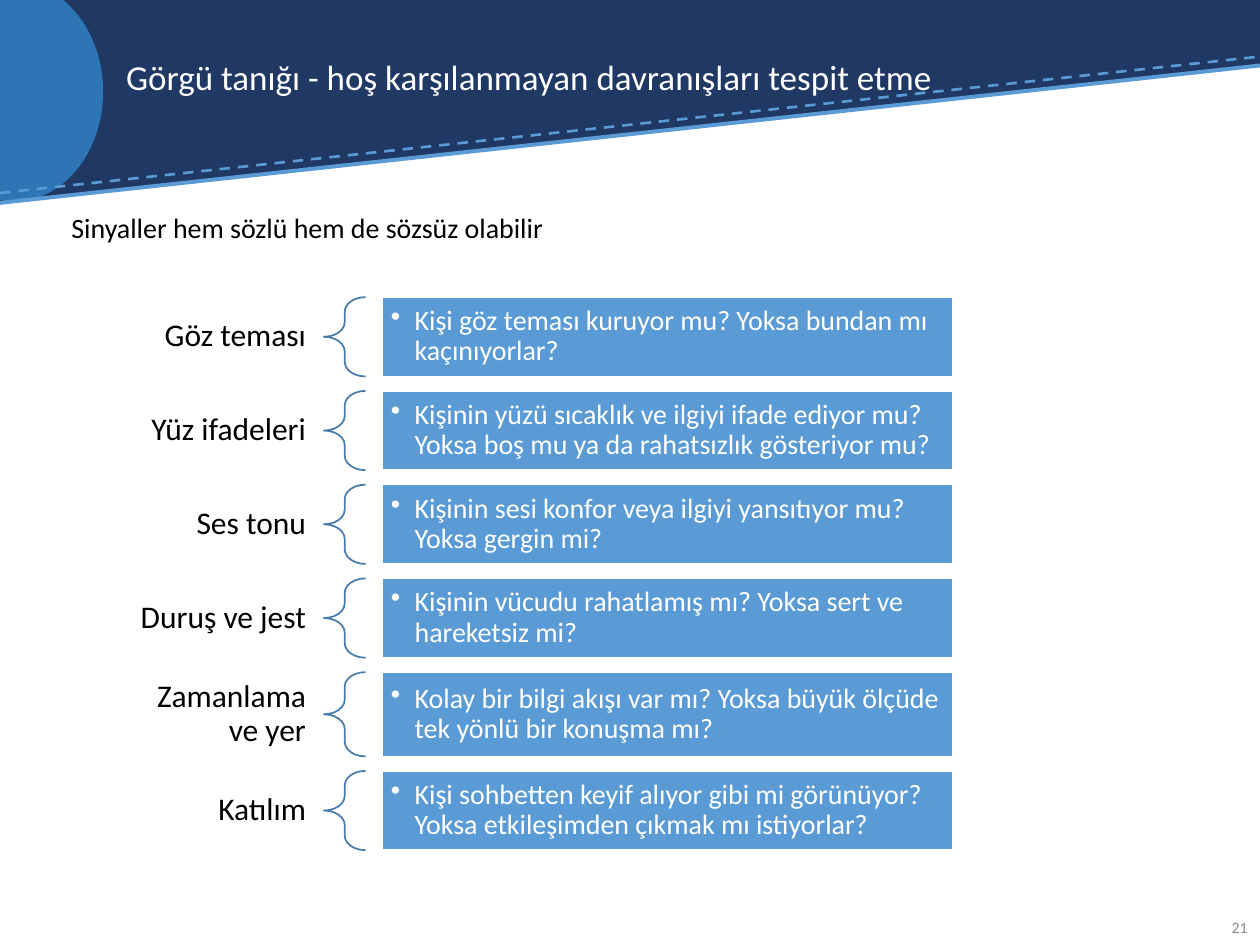
from lxml.etree import SubElement
from pptx import Presentation
from pptx.dml.color import RGBColor
from pptx.enum.dml import MSO_LINE
from pptx.enum.shapes import MSO_CONNECTOR, MSO_SHAPE
from pptx.enum.text import MSO_ANCHOR, PP_ALIGN
from pptx.oxml.ns import qn
from pptx.util import Cm, Pt

TITLE = "Görgü tanığı - hoş karşılanmayan davranışları tespit etme"
INTRO = "Sinyaller hem sözlü hem de sözsüz olabilir"
PAGE = "21"
SIGNALS = [
    ("Göz teması", "Kişi göz teması kuruyor mu? Yoksa bundan mı kaçınıyorlar?", 1.6),
    ("Yüz ifadeleri", "Kişinin yüzü sıcaklık ve ilgiyi ifade ediyor mu? "
     "Yoksa boş mu ya da rahatsızlık gösteriyor mu?", 1.6),
    ("Ses tonu", "Kişinin sesi konfor veya ilgiyi yansıtıyor mu? Yoksa gergin mi?", 1.6),
    ("Duruş ve jest", "Kişinin vücudu rahatlamış mı? Yoksa sert ve hareketsiz mi?", 1.6),
    ("Zamanlama ve yer", "Kolay bir bilgi akışı var mı? "
     "Yoksa büyük ölçüde tek yönlü bir konuşma mı?", 1.7),
    ("Katılım", "Kişi sohbetten keyif alıyor gibi mi görünüyor? "
     "Yoksa etkileşimden çıkmak mı istiyorlar?", 1.6),
]
NAVY, BLUE, SKY, BRACE = "203864", "2E75B6", "5B9BD5", "497CAB"
WHITE, BLACK, GREY = "FFFFFF", "000000", "8C8C8C"
FIRST_TOP, GAP = 5.99, 0.29


def rgb(code):
    return RGBColor.from_string(code)


def add_shape(s, kind, box, fill=None, line=None):
    sp = s.shapes.add_shape(kind, *map(Cm, box))
    sp.shadow.inherit = False
    if fill:
        sp.fill.solid()
        sp.fill.fore_color.rgb = rgb(fill)
    else:
        sp.fill.background()
    if line:
        sp.line.color.rgb = rgb(line)
        sp.line.width = Pt(1)
    else:
        sp.line.fill.background()
    return sp


def add_line(s, start_y, end_y, width, dash=None):
    sp = s.shapes.add_connector(MSO_CONNECTOR.STRAIGHT, 0, Cm(start_y), Cm(25.4), Cm(end_y))
    sp.line.color.rgb = rgb(SKY)
    sp.line.width = Pt(width)
    if dash:
        sp.line.dash_style = dash
    SubElement(sp._element.spPr, qn("a:effectLst"))


def write(sp, text, size, color, align=PP_ALIGN.LEFT, anchor=MSO_ANCHOR.MIDDLE,
          insets=(0.25, 0.13), bullet=False):
    tf = sp.text_frame
    tf.word_wrap = True
    tf.vertical_anchor = anchor
    tf.margin_left = tf.margin_right = Cm(insets[0])
    tf.margin_top = tf.margin_bottom = Cm(insets[1])
    p = tf.paragraphs[0]
    p.alignment = align
    p.line_spacing = 0.9
    if bullet:
        pPr = p._p.get_or_add_pPr()
        pPr.set("marL", str(Cm(0.48)))
        pPr.set("indent", str(-Cm(0.48)))
        SubElement(pPr, qn("a:buChar"), char="•")
    r = p.add_run()
    r.text = text
    r.font.name = "Calibri"
    r.font.size = Pt(size)
    r.font.color.rgb = rgb(color)


def add_text(s, box, *args, **kwargs):
    write(s.shapes.add_textbox(*map(Cm, box)), *args, **kwargs)


def add_header(s):
    add_shape(s, MSO_SHAPE.RECTANGLE, (0, 0, 25.4, 1.32), NAVY)
    wedge = add_shape(s, MSO_SHAPE.RIGHT_TRIANGLE, (0, 1.3, 25.4, 2.77), NAVY)
    wedge._element.spPr.xfrm.set("flipV", "1")
    add_shape(s, MSO_SHAPE.OVAL, (-1.5, -0.36, 3.58, 4.42), BLUE)
    add_line(s, 3.89, 1.14, 1.5, MSO_LINE.DASH)
    add_line(s, 4.09, 1.32, 2.25)
    title = s.shapes.title
    title.left, title.top, title.width, title.height = map(Cm, (2.29, 0.51, 20.45, 2.18))
    write(title, TITLE, 20, WHITE)
    s.shapes._spTree.append(title._element)


def add_signals(s):
    top = FIRST_TOP
    for label, question, height in SIGNALS:
        add_text(s, (2.29, top, 4.24, height), label, 18, BLACK,
                 align=PP_ALIGN.RIGHT, insets=(0.36, 0.13))
        brace = add_shape(s, MSO_SHAPE.LEFT_BRACE, (6.53, top, 0.84, height), line=BRACE)
        brace.adjustments[0] = 0.35
        box = add_shape(s, MSO_SHAPE.RECTANGLE, (7.7, top, 11.51, height), SKY, WHITE)
        write(box, question, 16, WHITE, insets=(0.18, 0.18), bullet=True)
        top += height + GAP


def main():
    prs = Presentation()
    prs.slide_width, prs.slide_height = Cm(25.4), Cm(19.05)
    s = prs.slides.add_slide(prs.slide_layouts[5])
    add_header(s)
    add_text(s, (1.19, 4.19, 22.43, 13.46), INTRO, 16, BLACK, anchor=MSO_ANCHOR.TOP)
    add_text(s, (24.05, 18.21, 1.35, 1.02), PAGE, 9, GREY, align=PP_ALIGN.RIGHT)
    add_signals(s)
    prs.save("out.pptx")


if __name__ == "__main__":
    main()
